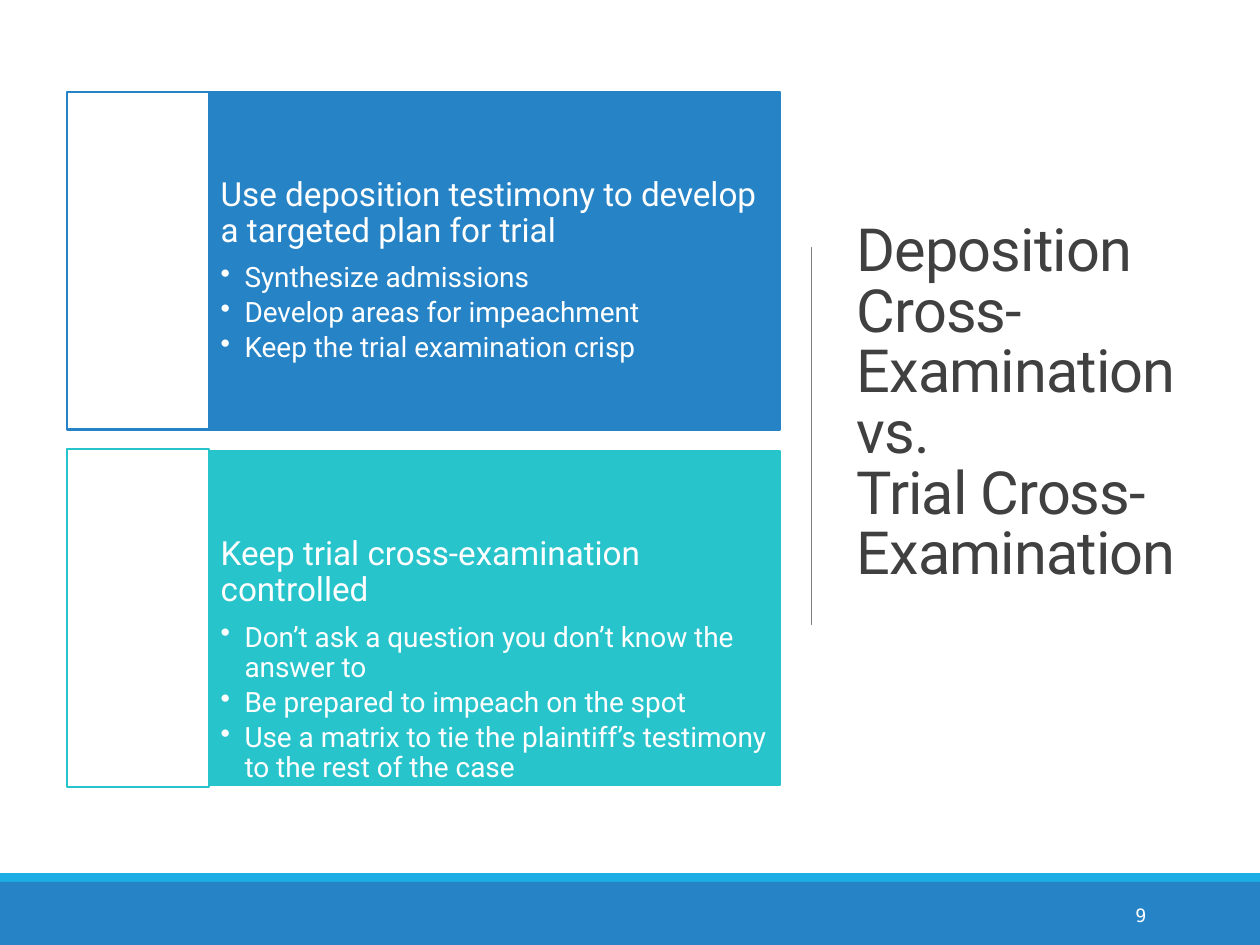
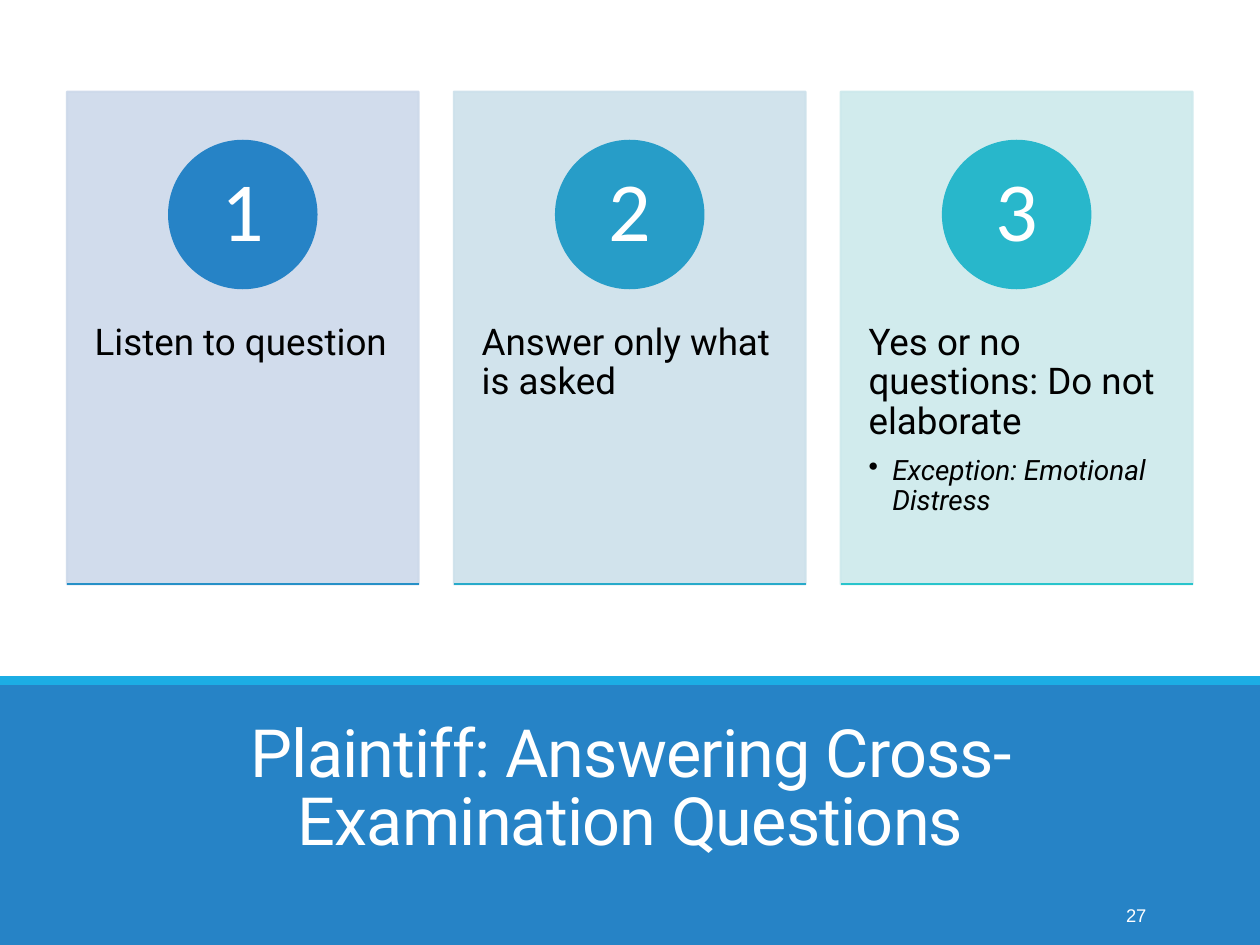
from dataclasses import dataclass
from typing import Optional

from lxml.etree import SubElement
from pptx import Presentation
from pptx.dml.color import RGBColor
from pptx.enum.shapes import MSO_CONNECTOR, MSO_SHAPE
from pptx.enum.text import MSO_ANCHOR, MSO_AUTO_SIZE, PP_ALIGN
from pptx.oxml.ns import qn
from pptx.presentation import Presentation as Deck
from pptx.shapes.autoshape import Shape
from pptx.slide import Slide
from pptx.text.text import TextFrame
from pptx.util import Cm, Pt


@dataclass(frozen=True)
class Theme:
    font: str = "Roboto"
    numeral_font: str = "Calibri"
    white: str = "FFFFFF"
    black: str = "000000"
    heading: str = "404040"
    divider: str = "808080"
    blue: str = "2683C6"
    stripe: str = "1CADE4"
    teal: str = "28C4CC"
    side_title_size: float = 34
    band_title_size: float = 38
    panel_size: float = 19
    card_size: float = 21
    bullet_size: float = 16
    numeral_size: float = 48
    page_size: float = 10.5
    outline: float = 1.25
    lead_gap: float = 8
    bullet_gap: float = 2.8


THEME = Theme()
SLIDE_W, SLIDE_H = 25.4, 19.05
STRIPE_H = 0.18
LEFT, TOP = 1.35, 1.85  # shared content corner, in cm


@dataclass(frozen=True)
class Box:
    """A rectangle in centimetres."""
    left: float
    top: float
    width: float
    height: float

    def emu(self) -> tuple[Cm, Cm, Cm, Cm]:
        return Cm(self.left), Cm(self.top), Cm(self.width), Cm(self.height)


@dataclass(frozen=True)
class Panel:
    color: str
    lead: str
    bullets: tuple[str, ...]
    trim: float = 0


@dataclass(frozen=True)
class Card:
    lead: str
    tint: str
    circle: str
    rule: str
    bullets: tuple[str, ...] = ()


PANELS = (
    Panel(THEME.blue, "Use deposition testimony to develop a targeted plan for trial",
          ("Synthesize admissions", "Develop areas for impeachment",
           "Keep the trial examination crisp")),
    Panel(THEME.teal, "Keep trial cross-examination controlled",
          ("Don’t ask a question you don’t know the answer to",
           "Be prepared to impeach on the spot",
           "Use a matrix to tie the plaintiff’s testimony to the rest of the case"),
          trim=0.04),
)

CARDS = (
    Card("Listen to question", "CDD9EA", "2683C6", "2690C7"),
    Card("Answer only what is asked", "CDE1EB", "279DC8", "27AACA"),
    Card("Yes or no questions: Do not elaborate", "CDE9EC", "28B7CB", "28C4CC",
         ("Exception: Emotional Distress",)),
)


# Drawing helpers
def rgb(color: str) -> RGBColor:
    return RGBColor.from_string(color)


def add_block(slide: Slide, box: Box, fill: str, line: Optional[str] = None,
              kind: MSO_SHAPE = MSO_SHAPE.RECTANGLE, alpha: int = 100) -> Shape:
    block = slide.shapes.add_shape(kind, *box.emu())
    block.shadow.inherit = False
    block.fill.solid()
    block.fill.fore_color.rgb = rgb(fill)
    if line:
        block.line.color.rgb = rgb(line)
        block.line.width = Pt(THEME.outline)
    else:
        block.line.fill.background()
    if alpha < 100:
        for color in block._element.spPr.iter(qn("a:srgbClr")):
            SubElement(color, qn("a:alpha"), val=str(alpha * 1000))
    return block


def add_line(slide: Slide, x1: float, y1: float, x2: float, y2: float,
             color: str, width: float) -> None:
    line = slide.shapes.add_connector(MSO_CONNECTOR.STRAIGHT, Cm(x1), Cm(y1), Cm(x2), Cm(y2))
    line.line.color.rgb = rgb(color)
    line.line.width = Pt(width)
    SubElement(line._element.spPr, qn("a:effectLst"))


def set_frame(frame: TextFrame, anchor: MSO_ANCHOR, side: float = 0.25,
              edge: float = 0.13) -> None:
    frame.word_wrap = True
    frame.auto_size = MSO_AUTO_SIZE.NONE
    frame.vertical_anchor = anchor
    frame.margin_left = frame.margin_right = Cm(side)
    frame.margin_top = frame.margin_bottom = Cm(edge)


def add_text(frame: TextFrame, text: str, size: float, color: str, font: str = THEME.font,
             align: PP_ALIGN = PP_ALIGN.LEFT, spacing: float = 0.9, after: float = 0,
             bullet: bool = False, italic: bool = False) -> None:
    """Fill the first paragraph, or append one when it is taken."""
    paragraph = frame.paragraphs[0]
    if paragraph.text:
        paragraph = frame.add_paragraph()
    paragraph.text = text
    paragraph.alignment = align
    paragraph.line_spacing = spacing
    paragraph.space_after = Pt(after)
    if bullet:
        properties = paragraph._p.get_or_add_pPr()
        properties.set("marL", str(Cm(0.48)))
        properties.set("indent", str(-Cm(0.48)))
        SubElement(properties, qn("a:buChar"), char="•")
    paragraph.font.size = Pt(size)
    paragraph.font.name = font
    paragraph.font.color.rgb = rgb(color)
    if italic:
        paragraph.font.italic = True


def add_points(frame: TextFrame, lead: str, size: float, bullets: tuple[str, ...],
               color: str, italic: bool = False) -> None:
    add_text(frame, lead, size, color, after=THEME.lead_gap)
    for point in bullets:
        add_text(frame, point, THEME.bullet_size, color, after=THEME.bullet_gap,
                 bullet=True, italic=italic)


# Parts shared by the slides
def add_titled_slide(deck: Deck, title: str, box: Box, size: float, color: str,
                     align: PP_ALIGN, anchor: MSO_ANCHOR, band_top: float,
                     page: str, page_font: str) -> Slide:
    slide = deck.slides.add_slide(deck.slide_layouts[5])
    add_block(slide, Box(0, band_top, SLIDE_W, STRIPE_H), THEME.stripe)
    floor_top = band_top + STRIPE_H
    add_block(slide, Box(0, floor_top, SLIDE_W, SLIDE_H - floor_top), THEME.blue)

    heading = slide.shapes.title
    heading.left, heading.top, heading.width, heading.height = box.emu()
    set_frame(heading.text_frame, anchor)
    add_text(heading.text_frame, title, size, color, align=align, spacing=0.85)
    for run in heading.text_frame.paragraphs[0].runs:
        run._r.get_or_add_rPr().set("spc", "-50")
    # Bring the title in front of the band
    slide.shapes._spTree.append(heading._element)

    number = slide.shapes.add_textbox(*Box(20.62, 17.93, 2.74, 1.02).emu())
    set_frame(number.text_frame, MSO_ANCHOR.MIDDLE)
    add_text(number.text_frame, page, THEME.page_size, THEME.white, page_font,
             PP_ALIGN.RIGHT, spacing=1.0, after=6)
    return slide


# Slide contents
def build_comparison(deck: Deck) -> None:
    slide = add_titled_slide(
        deck, "Deposition Cross-Examination vs.\vTrial Cross-Examination",
        Box(17.02, 1.75, 7.04, 12.83), THEME.side_title_size, THEME.heading,
        PP_ALIGN.LEFT, MSO_ANCHOR.MIDDLE, 17.6, "9", "DejaVu Sans Mono")
    add_line(slide, 16.36, 4.98, 16.36, 12.6, THEME.divider, 0.5)

    tile_w, panel_w, panel_h, pitch = 2.87, 11.51, 6.81, 7.21
    for row, panel in enumerate(PANELS):
        top = TOP + row * pitch
        body = add_block(slide, Box(LEFT + tile_w, top + panel.trim, panel_w,
                                    panel_h - 2 * panel.trim), panel.color, panel.color)
        set_frame(body.text_frame, MSO_ANCHOR.TOP, 0.23, 1.73)
        add_points(body.text_frame, panel.lead, THEME.panel_size, panel.bullets, THEME.white)
        add_block(slide, Box(LEFT, top, tile_w, panel_h), THEME.white, panel.color)


def build_answering(deck: Deck) -> None:
    slide = add_titled_slide(
        deck, "Plaintiff: Answering Cross- Examination Questions",
        Box(2.23, 14.58, 20.96, 2.87), THEME.band_title_size, THEME.white,
        PP_ALIGN.CENTER, MSO_ANCHOR.BOTTOM, 13.63, "27", "Arial")

    card_w, card_h, pitch, diameter = 7.09, 9.93, 7.8, 2.97
    bottom = TOP + card_h
    for column, card in enumerate(CARDS):
        left = LEFT + column * pitch
        body = add_block(slide, Box(left, TOP, card_w, card_h), card.tint, card.tint, alpha=90)
        set_frame(body.text_frame, MSO_ANCHOR.TOP, 0.56, 0.91)
        body.text_frame.margin_top = Cm(4.67)
        add_points(body.text_frame, card.lead, THEME.card_size, card.bullets,
                   THEME.black, italic=True)

        circle = add_block(slide, Box(left + (card_w - diameter) / 2, 2.84, diameter, diameter),
                           card.circle, card.circle, MSO_SHAPE.OVAL)
        set_frame(circle.text_frame, MSO_ANCHOR.MIDDLE, 0.23, 0.03)
        add_text(circle.text_frame, str(column + 1), THEME.numeral_size, THEME.white,
                 THEME.numeral_font, PP_ALIGN.CENTER)
        add_line(slide, left, bottom, left + card_w, bottom, card.rule, THEME.outline)


def main() -> None:
    deck = Presentation()
    deck.slide_width, deck.slide_height = Cm(SLIDE_W), Cm(SLIDE_H)
    build_comparison(deck)
    build_answering(deck)
    deck.save("out.pptx")


if __name__ == "__main__":
    main()
